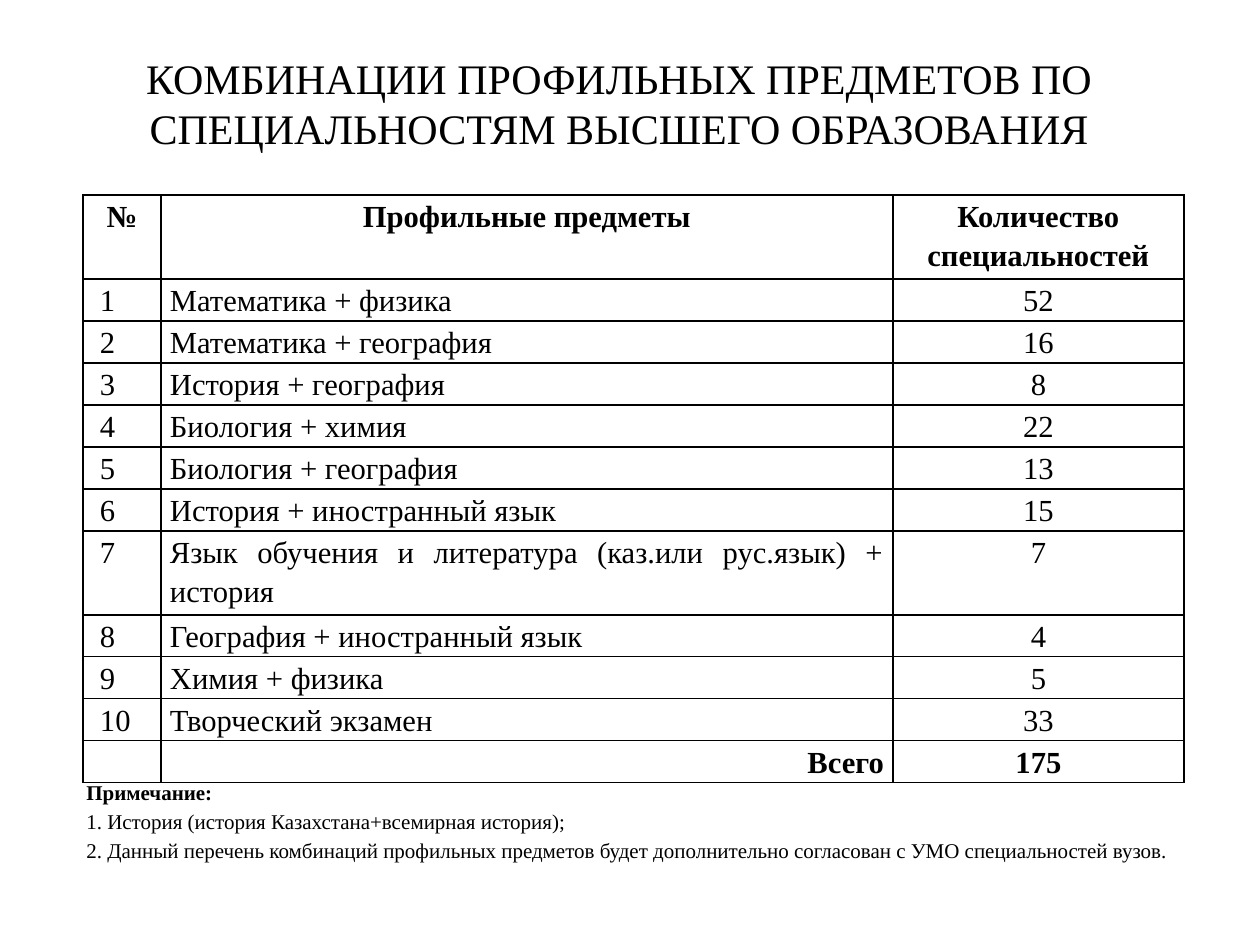
from lxml import etree
from pptx import Presentation
from pptx import util as u
from pptx.dml.color import RGBColor
from pptx.enum import text
from pptx.oxml.ns import qn

# Content
TITLE = "КОМБИНАЦИИ ПРОФИЛЬНЫХ ПРЕДМЕТОВ ПО СПЕЦИАЛЬНОСТЯМ ВЫСШЕГО ОБРАЗОВАНИЯ"
HEADER = ("№", "Профильные предметы", "Количество специальностей")
SUBJECTS = [
    ("Математика + физика", 52),
    ("Математика + география", 16),
    ("История + география", 8),
    ("Биология + химия", 22),
    ("Биология + география", 13),
    ("История + иностранный язык", 15),
    ("Язык обучения и литература (каз.или рус.язык) + история", 7),
    ("География + иностранный язык", 4),
    ("Химия + физика", 5),
    ("Творческий экзамен", 33),
]
TOTAL = ("", "Всего", sum(count for _, count in SUBJECTS))
NOTES = [
    "Примечание:",
    "1. История (история Казахстана+всемирная история);",
    "2. Данный перечень комбинаций профильных предметов будет дополнительно "
    "согласован с УМО специальностей вузов.",
]

# Layout in px, 126 to the inch
SLIDE = (1260, 945)
TITLE_BOX = (44, 45, 1150, 115)
NOTES_BOX = (74, 770, 1119, 101)
TABLE_LEFT, TABLE_TOP = 83, 195
COLUMNS = (78, 732, 291)
ROW, TALL_ROW = 42, 84
TALL_ROWS = (0, 7)
CELL_MARGIN, NUMBER_MARGIN = 9, 17

FONT = "Times New Roman"
BLACK = "000000"
LEFT_TO_RIGHT = text.PP_ALIGN.JUSTIFY
CENTER = text.PP_ALIGN.CENTER
RIGHT = text.PP_ALIGN.RIGHT


def px(length):
    return u.Emu(length * 914400 // 126)


def color(value):
    return RGBColor.from_string(value)


def write(para, words, size, bold=False, align=LEFT_TO_RIGHT, spacing=1.15):
    para.alignment = align
    para.line_spacing = spacing
    if words:
        span = para.add_run()
        span.text = words
        span.font.name = FONT
        span.font.size = u.Pt(size)
        span.font.bold = bold
        span.font.color.rgb = color(BLACK)


def add_borders(cell):
    props = cell._tc.get_or_add_tcPr()
    for index, side in enumerate(("lnL", "lnR", "lnT", "lnB")):
        line = etree.Element(qn(f"a:{side}"), w=str(u.Pt(1)))
        fill = etree.SubElement(line, qn("a:solidFill"))
        etree.SubElement(fill, qn("a:srgbClr"), val=BLACK)
        props.insert(index, line)


deck = Presentation()
deck.slide_width, deck.slide_height = map(px, SLIDE)
page = deck.slides.add_slide(deck.slide_layouts[5])

# Title
title = page.shapes.title
title.left, title.top, title.width, title.height = map(px, TITLE_BOX)
title.text_frame.auto_size = text.MSO_AUTO_SIZE.NONE
write(title.text_frame.paragraphs[0], TITLE, 24, align=CENTER, spacing=1.0)

# Table of subject combinations
rows = [HEADER]
rows += [(number, *subject) for number, subject in enumerate(SUBJECTS, 1)]
rows.append(TOTAL)
heights = [TALL_ROW if r in TALL_ROWS else ROW for r in range(len(rows))]
frame = page.shapes.add_table(
    len(rows), len(COLUMNS), px(TABLE_LEFT), px(TABLE_TOP),
    px(sum(COLUMNS)), px(sum(heights)))
table = frame.table
table.first_row = table.horz_banding = False
for column, width in zip(table.columns, COLUMNS):
    column.width = px(width)

for r, values in enumerate(rows):
    table.rows[r].height = px(heights[r])
    is_header, is_total = r == 0, r == len(rows) - 1
    for c, value in enumerate(values):
        cell = table.cell(r, c)
        is_number = c == 0 and not is_header
        cell.margin_left = px(NUMBER_MARGIN if is_number else CELL_MARGIN)
        cell.margin_right = px(CELL_MARGIN)
        cell.margin_top = cell.margin_bottom = 0
        cell.fill.background()
        add_borders(cell)
        if is_header or c == 2:
            align = CENTER
        else:
            align = RIGHT if is_total else LEFT_TO_RIGHT
        write(cell.text_frame.paragraphs[0], str(value), 17.5,
              bold=is_header or is_total, align=align)

# Notes below the table
notes = page.shapes.add_textbox(*map(px, NOTES_BOX)).text_frame
notes.word_wrap = True
for n, note in enumerate(NOTES):
    para = notes.add_paragraph() if n else notes.paragraphs[0]
    write(para, note, 12, bold=n == 0)

deck.save("out.pptx")
